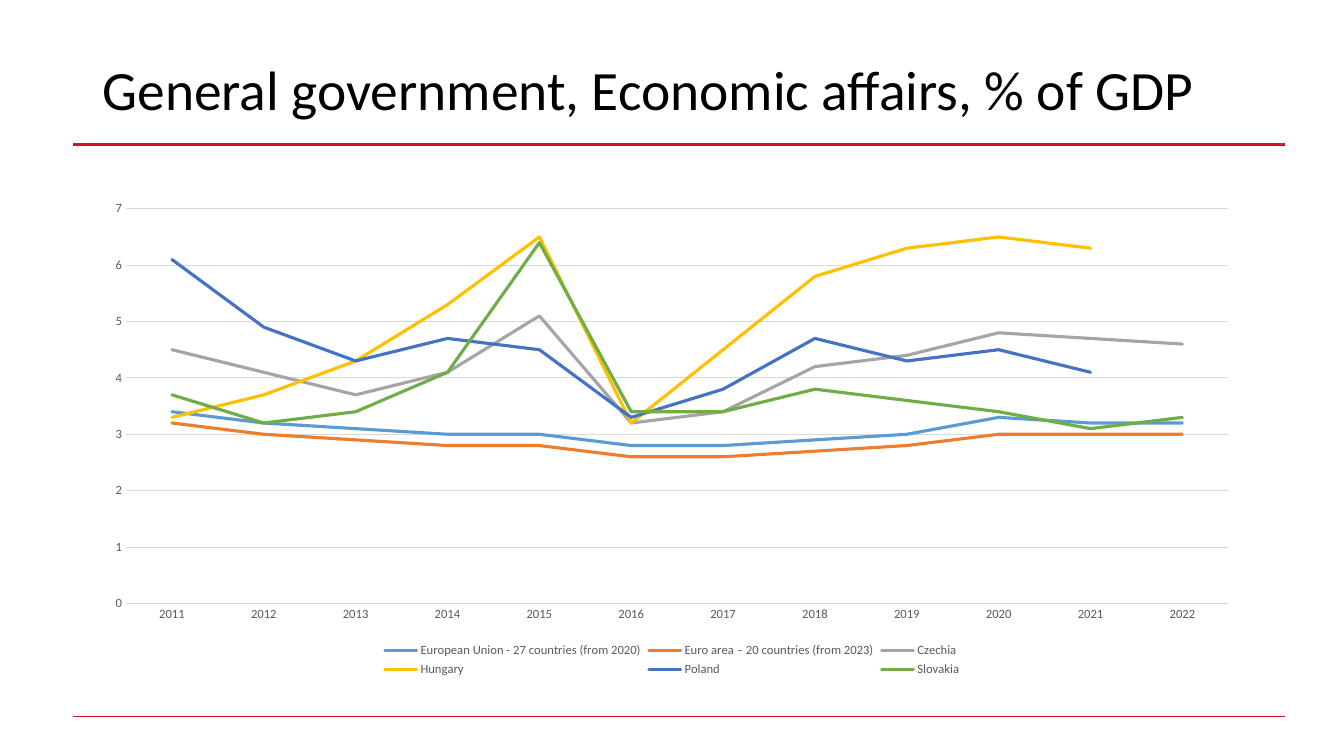
from lxml import etree
from pptx import Presentation
from pptx.chart.data import CategoryChartData
from pptx.dml.color import RGBColor
from pptx.enum import chart as ch, shapes, text
from pptx.oxml.ns import qn
from pptx.util import Cm, Pt

FONT = "Calibri"
COLORS = {
    "black": "000000",
    "rule": "D81029",
    "label": "595959",
    "grid": "D9D9D9",
    "blue": "5B9BD5",
    "orange": "ED7D31",
    "grey": "A5A5A5",
    "yellow": "FFC000",
    "navy": "4472C4",
    "green": "70AD47",
}
YEARS = [str(year) for year in range(2011, 2023)]
SERIES = [
    ("European Union - 27 countries (from 2020)", "blue",
     [3.4, 3.2, 3.1, 3, 3, 2.8, 2.8, 2.9, 3, 3.3, 3.2, 3.2]),
    ("Euro area – 20 countries (from 2023)", "orange",
     [3.2, 3, 2.9, 2.8, 2.8, 2.6, 2.6, 2.7, 2.8, 3, 3, 3]),
    ("Czechia", "grey",
     [4.5, 4.1, 3.7, 4.1, 5.1, 3.2, 3.4, 4.2, 4.4, 4.8, 4.7, 4.6]),
    ("Hungary", "yellow",
     [3.3, 3.7, 4.3, 5.3, 6.5, 3.2, 4.5, 5.8, 6.3, 6.5, 6.3, None]),
    ("Poland", "navy",
     [6.1, 4.9, 4.3, 4.7, 4.5, 3.3, 3.8, 4.7, 4.3, 4.5, 4.1, None]),
    ("Slovakia", "green",
     [3.7, 3.2, 3.4, 4.1, 6.4, 3.4, 3.4, 3.8, 3.6, 3.4, 3.1, 3.3]),
]


def rgb(name):
    return RGBColor.from_string(COLORS[name])


def style_font(font, size, color):
    font.name = FONT
    font.size = Pt(size)
    font.color.rgb = rgb(color)


def style_line(line, color, width):
    line.color.rgb = rgb(color)
    line.width = Pt(width)


def add_rule(s, y, width):
    """Draw a red rule across the slide."""
    rule = s.shapes.add_connector(
        shapes.MSO_CONNECTOR.STRAIGHT, Cm(1.84), Cm(y), Cm(32.38), Cm(y))
    style_line(rule.line, "rule", width)
    etree.SubElement(rule._element.spPr, qn("a:effectLst"))


def set_title(s, title):
    sp = s.shapes.title
    sp.left, sp.top, sp.width, sp.height = Cm(2.33), Cm(1.02), Cm(29.21), Cm(2.62)
    tf = sp.text_frame
    tf.text = title
    tf.word_wrap = True
    tf.auto_size = text.MSO_AUTO_SIZE.NONE
    tf.vertical_anchor = text.MSO_ANCHOR.MIDDLE
    p = tf.paragraphs[0]
    p.alignment = text.PP_ALIGN.LEFT
    p.line_spacing = 0.9
    style_font(p.runs[0].font, 39.6, "black")


def style_axes(chart):
    for axis in (chart.category_axis, chart.value_axis):
        axis.major_tick_mark = axis.minor_tick_mark = ch.XL_TICK_MARK.NONE
        style_font(axis.tick_labels.font, 9, "label")
    style_line(chart.category_axis.format.line, "grid", 0.75)
    values = chart.value_axis
    values.format.line.fill.background()
    style_line(values.major_gridlines.format.line, "grid", 0.75)
    values.minimum_scale, values.maximum_scale, values.major_unit = 0, 7, 1
    values.tick_labels.number_format = "0"
    values.tick_labels.number_format_is_linked = False


def add_line_chart(s):
    data = CategoryChartData(number_format="0.0")
    data.categories = YEARS
    for name, _, values in SERIES:
        data.add_series(name, values)
    chart = s.shapes.add_chart(
        ch.XL_CHART_TYPE.LINE, Cm(2.33), Cm(4.83), Cm(29.21), Cm(12.32), data).chart
    chart.has_title = False
    style_font(chart.font, 10, "black")
    style_axes(chart)
    chart.has_legend = True
    chart.legend.position = ch.XL_LEGEND_POSITION.BOTTOM
    chart.legend.include_in_layout = False
    style_font(chart.legend.font, 9, "label")
    plot = chart.plots[0]
    plot.vary_by_categories = False
    for series, (_, color, _) in zip(plot.series, SERIES):
        series.smooth = False
        series.marker.style = ch.XL_MARKER_STYLE.NONE
        style_line(series.format.line, color, 2.25)
        series.format.line._ln.set("cap", "rnd")


def main():
    prs = Presentation()
    prs.slide_width, prs.slide_height = Cm(33.87), Cm(19.05)
    s = prs.slides.add_slide(prs.slide_layouts[5])
    add_rule(s, 3.64, 2.25)
    add_rule(s, 18.06, 1)
    set_title(s, "General government, Economic affairs, % of GDP")
    add_line_chart(s)
    prs.save("out.pptx")


if __name__ == "__main__":
    main()
